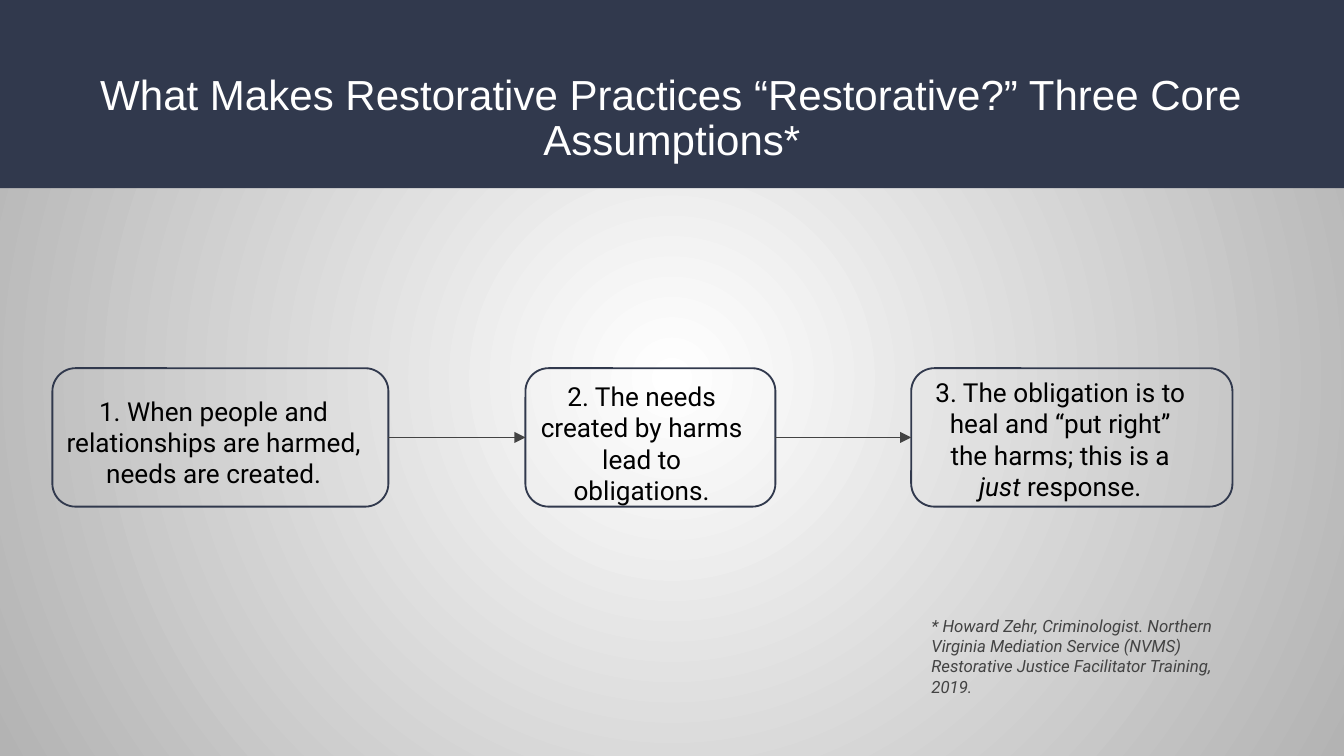
from lxml import etree
from pptx import Presentation
from pptx import util as u
from pptx.dml import color
from pptx.enum import shapes, text
from pptx.oxml import parse_xml
from pptx.oxml.ns import nsdecls, qn

NAVY, GRAY = "31394D", "434343"
MID = text.PP_ALIGN.CENTER
WIDE = 10
TALL = WIDE * 9 / 16
TOP, HIGH = 2.74, 1.03  # row of step boxes

# box left, box width, text box, runs of (words, italic)
STEPS = [
    (0.39, 2.5, (0.29, 2.9, 2.6, 0.76),
     [("1. When people and relationships are harmed, needs are created.", False)]),
    (3.91, 1.86, (3.91, 2.79, 1.73, 0.98),
     [("2. The needs created by harms lead to obligations.", False)]),
    (6.78, 2.39, (6.86, 2.76, 2.06, 0.98),
     [("3. The obligation is to heal and “put right” the harms; this is a ", False),
      ("just ", True), ("response.", False)]),
]


def rgb(code):
    return color.RGBColor.from_string(code)


def inch(box):
    return [u.Inches(n) for n in box]


def write(shape, runs, size, face, tint, align=None):
    """Fill a shape with one paragraph of (words, italic) runs."""
    frame = shape.text_frame
    frame.word_wrap = True
    frame.auto_size = text.MSO_AUTO_SIZE.NONE
    frame.margin_left = frame.margin_right = u.Inches(0.07)
    frame.margin_top = frame.margin_bottom = u.Inches(0.04)
    para = frame.paragraphs[0]
    para.alignment = align
    for words, slant in runs:
        run = para.add_run()
        run.text = words
        run.font.size = u.Pt(size)
        run.font.name = face
        run.font.italic = slant
        run.font.color.rgb = rgb(tint)
    return para


def backdrop(slide):
    """Light radial gradient, white at the centre."""
    slide.background.fill.solid()
    props = slide.background._cSld.find(".//" + qn("p:bgPr"))
    props.replace(props[0], parse_xml(
        f'<a:gradFill {nsdecls("a")} rotWithShape="1"><a:gsLst>'
        '<a:gs pos="0"><a:srgbClr val="FFFFFF"/></a:gs>'
        '<a:gs pos="100000"><a:srgbClr val="B3B3B3"/></a:gs></a:gsLst>'
        '<a:path path="circle"><a:fillToRect l="50000" t="50000" r="50000" b="50000"/>'
        '</a:path></a:gradFill>'))


def header(slide, box):
    left, top, wide, _ = box
    band = slide.shapes.add_shape(shapes.MSO_SHAPE.RECTANGLE, *inch(box))
    band.shadow.inherit = False
    band.fill.solid()
    band.fill.fore_color.rgb = rgb(NAVY)
    band.line.fill.background()
    title = slide.shapes.title
    title._element.addprevious(band._element)
    title.left, title.top, title.width, title.height = inch(
        (left + 0.34, top + 0.55, wide - 0.68, 0.68))
    title.text_frame.vertical_anchor = text.MSO_ANCHOR.MIDDLE
    para = write(title, [("What Makes Restorative Practices “Restorative?” "
                          "Three Core Assumptions*", False)],
                 22.5, "Arial", "FFFFFF", MID)
    para.line_spacing = 0.9


def step(slide, box, area, runs):
    note = slide.shapes.add_textbox(*inch(area))
    write(note, runs, 14, "Roboto", "000000", MID)
    frame = slide.shapes.add_shape(shapes.MSO_SHAPE.ROUNDED_RECTANGLE, *inch(box))
    frame.adjustments[0] = 0.167
    frame.shadow.inherit = False
    frame.fill.background()
    frame.line.color.rgb = rgb(NAVY)
    frame.line.width = u.Pt(1)
    return frame


def arrow(slide, start, end):
    link = slide.shapes.add_connector(shapes.MSO_CONNECTOR.STRAIGHT, 0, 0, 0, 0)
    link.begin_connect(start, 3)
    link.end_connect(end, 1)
    link.line.color.rgb = rgb(GRAY)
    link.line.width = u.Pt(0.75)
    etree.SubElement(link.line._get_or_add_ln(), qn("a:tailEnd"), type="triangle")
    etree.SubElement(link._element.spPr, qn("a:effectLst"))


def flow(slide):
    frames = [step(slide, (left, TOP, wide, HIGH), area, runs)
              for left, wide, area, runs in STEPS]
    for start, end in zip(frames, frames[1:]):
        arrow(slide, start, end)


def source(slide, box):
    note = slide.shapes.add_textbox(*inch(box))
    write(note, [("* Howard Zehr, Criminologist. Northern Virginia Mediation Service "
                  "(NVMS) Restorative Justice Facilitator Training, 2019.", True)],
          9, "Roboto", GRAY)


def main():
    deck = Presentation()
    deck.slide_width, deck.slide_height = inch((WIDE, TALL))
    slide = deck.slides.add_slide(deck.slide_layouts[5])
    backdrop(slide)
    header(slide, (0, 0, WIDE, 1.4))
    flow(slide)
    source(slide, (6.86, 4.54, 2.39, 0.68))
    deck.save("out.pptx")


if __name__ == "__main__":
    main()
